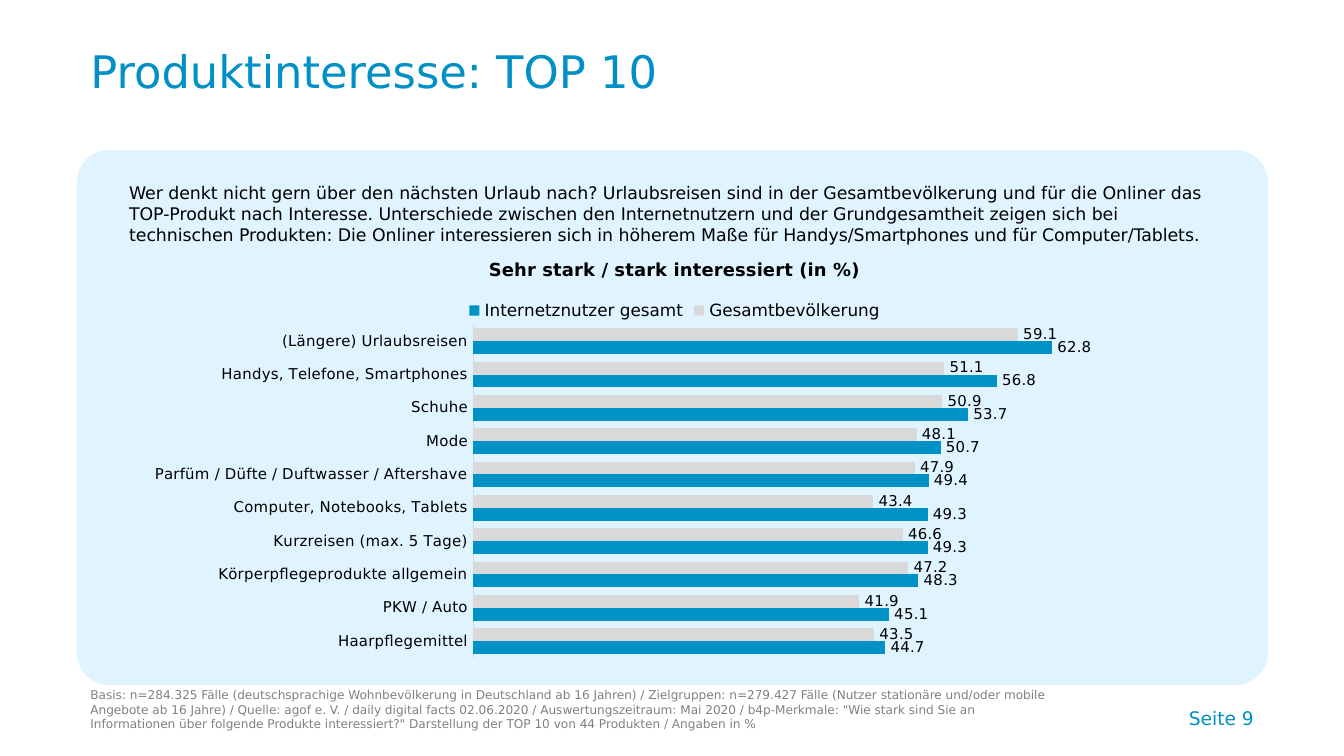
from dataclasses import dataclass

from lxml import etree
from pptx import Presentation
from pptx import util as u
from pptx.chart.data import CategoryChartData
from pptx.dml.color import RGBColor
from pptx.enum import chart as ch, shapes, text
from pptx.oxml.ns import qn

SCALE = 914400 / 134.4


def px(n):
    return u.Emu(round(n * SCALE))


@dataclass(frozen=True)
class Theme:
    face: str = "DejaVu Sans"
    blue: str = "0090C5"
    bar: str = "0092C7"
    pale: str = "DFF4FF"
    gray: str = "D9D9D9"
    note: str = "808080"
    ink: str = "000000"
    head: float = 24
    page: float = 10
    lead: float = 9.3
    foot: float = 6.5
    label: float = 8
    key: float = 9
    title: float = 9.6


class Deck:
    def __init__(self, theme, width, height):
        self.theme = theme
        self.prs = Presentation()
        self.prs.slide_width, self.prs.slide_height = px(width), px(height)
        self.slide = self.prs.slides.add_slide(self.prs.slide_layouts[1])

    def font(self, font, size, color, bold=False):
        font.name, font.size, font.bold = self.theme.face, u.Pt(size), bold
        font.color.rgb = RGBColor.from_string(color)

    def words(self, shape, words, size, color, anchor, align=text.PP_ALIGN.LEFT):
        frame = shape.text_frame
        frame.word_wrap = True
        frame.auto_size = text.MSO_AUTO_SIZE.NONE
        frame.vertical_anchor = anchor
        frame.text = words
        para = frame.paragraphs[0]
        para.alignment = align
        para.space_before = u.Pt(0)
        if shape.is_placeholder and shape.placeholder_format.idx == 1:
            props = para._p.get_or_add_pPr()
            props.set("marL", "0")
            props.set("indent", "0")
            etree.SubElement(props, qn("a:buNone"))
        self.font(para.font, size, color)
        return para

    def place(self, idx, box, words, size, color, anchor):
        shape = self.slide.placeholders[idx]
        shape.left, shape.top, shape.width, shape.height = map(px, box)
        return self.words(shape, words, size, color, anchor)

    def title(self, box, words):
        para = self.place(0, box, words, self.theme.head, self.theme.blue,
                          text.MSO_ANCHOR.MIDDLE)
        para.line_spacing = 0.8

    def note(self, box, words):
        self.place(1, box, words, self.theme.foot, self.theme.note,
                   text.MSO_ANCHOR.BOTTOM)

    def label(self, box, words, size, color, anchor, align=text.PP_ALIGN.LEFT):
        shape = self.slide.shapes.add_textbox(*map(px, box))
        self.words(shape, words, size, color, anchor, align)

    def panel(self, box):
        shape = self.slide.shapes.add_shape(
            shapes.MSO_SHAPE.ROUNDED_RECTANGLE, *map(px, box))
        shape.adjustments[0] = 0.06
        shape.shadow.inherit = False
        shape.fill.solid()
        shape.fill.fore_color.rgb = RGBColor.from_string(self.theme.pale)
        shape.line.fill.background()
        self.slide.shapes._spTree.insert(2, shape._element)

    def chart(self, box, title, names, rows, plot):
        theme = self.theme
        data = CategoryChartData(number_format="#,##0.0")
        data.categories = [row[0] for row in rows]
        for col, name in enumerate(names, 1):
            data.add_series(name, [row[col] for row in rows])
        chart = self.slide.shapes.add_chart(
            ch.XL_CHART_TYPE.BAR_CLUSTERED, *map(px, box), data).chart
        self.font(chart.font, theme.label, theme.ink)

        chart.has_title = True
        chart.chart_title.include_in_layout = False
        frame = chart.chart_title.text_frame
        frame.text = title
        self.font(frame.paragraphs[0].font, theme.title, theme.ink, True)

        chart.has_legend = True
        chart.legend.position = ch.XL_LEGEND_POSITION.TOP
        chart.legend.include_in_layout = False
        self.font(chart.legend.font, theme.key, theme.ink)

        cats = chart.category_axis
        cats.reverse_order = True
        cats.major_tick_mark = ch.XL_TICK_MARK.NONE
        cats.format.line.color.rgb = RGBColor.from_string(theme.gray)
        cats.format.line.width = u.Pt(0.75)
        self.font(cats.tick_labels.font, theme.label, theme.ink)
        vals = chart.value_axis
        vals.minimum_scale, vals.maximum_scale = 0, 80
        vals.has_major_gridlines = False
        vals.visible = False

        bars = chart.plots[0]
        bars.gap_width, bars.overlap = 60, 0
        bars.vary_by_categories = False
        for series, color in zip(bars.series, (theme.gray, theme.bar)):
            series.format.fill.solid()
            series.format.fill.fore_color.rgb = RGBColor.from_string(color)
            tags = series.data_labels
            tags.show_value = True
            tags.position = ch.XL_LABEL_POSITION.OUTSIDE_END
            tags.number_format = "#,##0.0"
            tags.number_format_is_linked = False
            self.font(tags.font, theme.label, theme.ink)
        self.layout(chart, plot)

    def layout(self, chart, plot):
        area = chart._chartSpace.chart.plotArea
        for old in area.findall(qn("c:layout")):
            area.remove(old)
        outer = etree.Element(qn("c:layout"))
        area.insert(0, outer)
        inner = etree.SubElement(outer, qn("c:manualLayout"))
        parts = [("layoutTarget", "inner"), ("xMode", "edge"), ("yMode", "edge")]
        parts += zip("xywh", plot)
        for tag, value in parts:
            etree.SubElement(inner, qn(f"c:{tag}")).set("val", str(value))


NAMES = ("Gesamtbevölkerung", "Internetznutzer gesamt")
ROWS = [
    ("(Längere) Urlaubsreisen", 59.1, 62.8),
    ("Handys, Telefone, Smartphones", 51.1, 56.8),
    ("Schuhe", 50.9, 53.7),
    ("Mode", 48.1, 50.7),
    ("Parfüm / Düfte / Duftwasser / Aftershave", 47.9, 49.4),
    ("Computer, Notebooks, Tablets", 43.4, 49.3),
    ("Kurzreisen (max. 5 Tage)", 46.6, 49.3),
    ("Körperpflegeprodukte allgemein", 47.2, 48.3),
    ("PKW / Auto", 41.9, 45.1),
    ("Haarpflegemittel", 43.5, 44.7),
]
LEAD = (
    "Wer denkt nicht gern über den nächsten Urlaub nach? Urlaubsreisen sind in der "
    "Gesamtbevölkerung und für die Onliner das TOP-Produkt nach Interesse. Unterschiede "
    "zwischen den Internetnutzern und der Grundgesamtheit zeigen sich bei technischen "
    "Produkten: Die Onliner interessieren sich in höherem Maße für Handys/Smartphones "
    "und für Computer/Tablets."
)
NOTE = (
    "Basis: n=284.325 Fälle (deutschsprachige Wohnbevölkerung in Deutschland ab 16 Jahren) "
    "/ Zielgruppen: n=279.427 Fälle (Nutzer stationäre und/oder mobile Angebote ab 16 Jahre) "
    "/ Quelle: agof e. V. / daily digital facts 02.06.2020 / Auswertungszeitraum: Mai 2020 "
    '/ b4p-Merkmale: "Wie stark sind Sie an Informationen über folgende Produkte '
    'interessiert?" Darstellung der TOP 10 von 44 Produkten / Angaben in %'
)


def main():
    theme = Theme()
    deck = Deck(theme, 1344, 756)
    deck.panel((77, 150, 1191, 535))
    deck.title((77, 38, 985, 75), "Produktinteresse: TOP 10")
    deck.chart((116, 238, 1117, 433), "Sehr stark / stark interessiert (in %)",
               NAMES, ROWS, (0.32, 0.2, 0.66, 0.77))
    deck.note((77, 685, 997, 53), NOTE)
    deck.label((116, 176, 1117, 85), LEAD, theme.lead, theme.ink, text.MSO_ANCHOR.TOP)
    deck.label((879, 685, 388, 51), "Seite 9", theme.page, theme.blue,
               text.MSO_ANCHOR.BOTTOM, text.PP_ALIGN.RIGHT)
    deck.prs.save("out.pptx")


if __name__ == "__main__":
    main()
